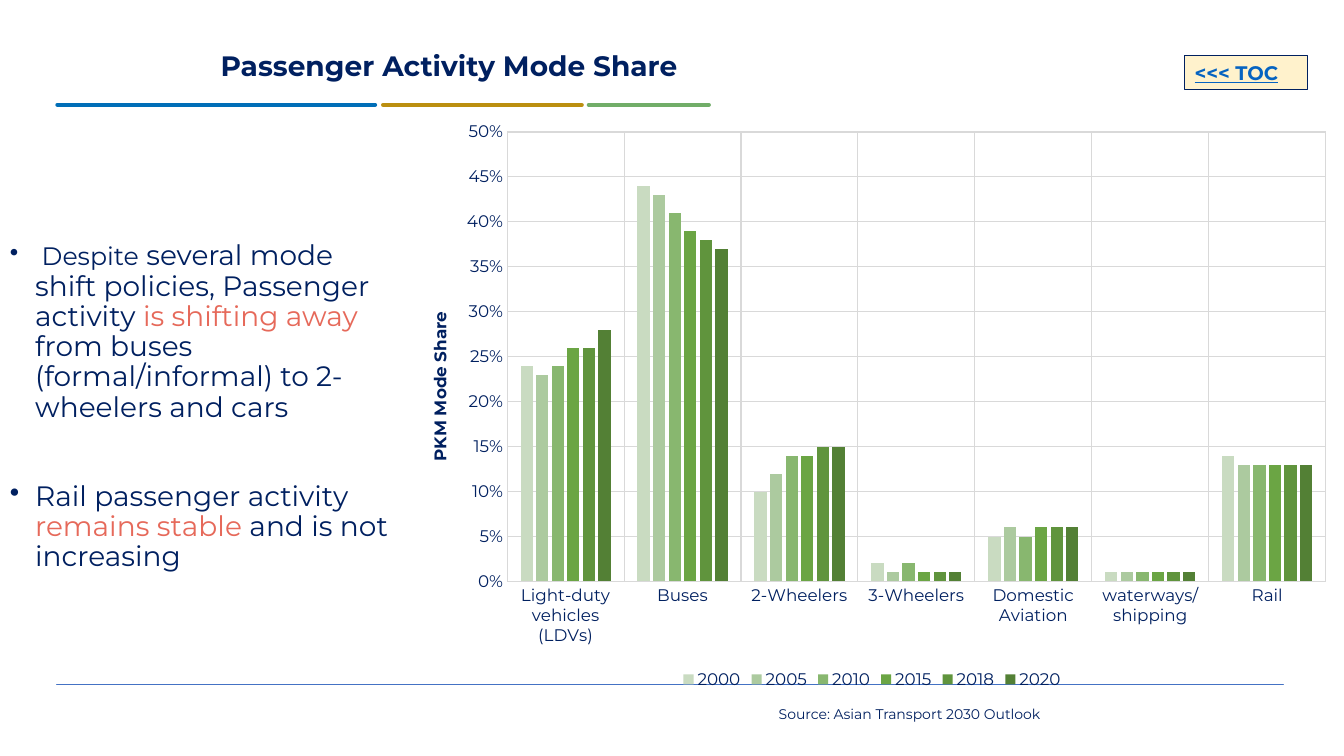
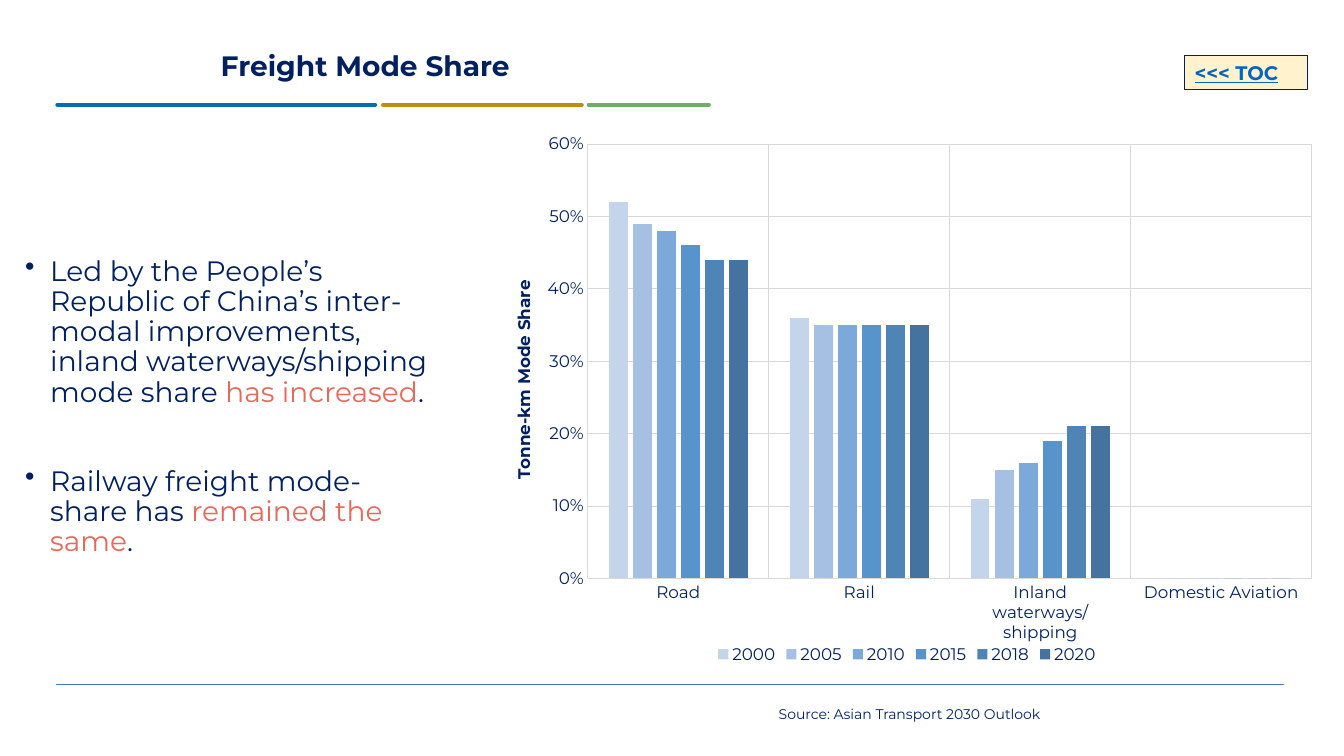
"""Build two slides on passenger and freight mode share."""
import pptx
import pptx.chart.data
import pptx.dml.color
import pptx.enum.chart
import pptx.enum.shapes
import pptx.enum.text
import pptx.oxml
import pptx.oxml.ns
import pptx.util
from dataclasses import dataclass

Inches = pptx.util.Inches
Pt = pptx.util.Pt
RGB = pptx.dml.color.RGBColor.from_string
qn = pptx.oxml.ns.qn
Align = pptx.enum.text.PP_ALIGN
Chart = pptx.enum.chart


@dataclass(frozen=True)
class Theme:
    font: str = "Montserrat"
    navy: str = "002060"
    accent: str = "E6695A"
    link: str = "0563C1"
    button: str = "FFF2CC"
    grid: str = "D9D9D9"
    footer: str = "4472C4"
    bands: tuple = ("006EB7", "BB8F10", "71AD68")
    greens: tuple = ("C9DBC1", "ACCA9F", "88B76F", "6BA544", "60943D", "538035")
    blues: tuple = ("C4D5EB", "A5C0E3", "7AA9DA", "5794CB", "4E85B6", "43739E")
    heading: int = 20
    lead: int = 18
    button_size: int = 14
    label: int = 12
    source: int = 10


theme = Theme()


def write_text(frame, paragraphs, size, color=theme.navy, bold=False, underline=False,
               align=Align.LEFT, spacing=None, gap=0, bullet=False):
    """Fill a frame with paragraphs, each a list of (text, overrides) runs."""
    frame.word_wrap = True
    frame.vertical_anchor = pptx.enum.text.MSO_ANCHOR.MIDDLE
    for index, runs in enumerate(paragraphs):
        paragraph = frame.add_paragraph() if index else frame.paragraphs[0]
        if bullet:
            properties = paragraph._p.get_or_add_pPr()
            properties.set("marL", str(Inches(0.25)))
            properties.set("indent", str(Inches(-0.25)))
            pptx.oxml.ns.nsdecls("a")
            properties.append(pptx.oxml.parse_xml(
                f'<a:buChar {pptx.oxml.ns.nsdecls("a")} char="•"/>'))
        paragraph.alignment = align
        if spacing:
            paragraph.line_spacing = spacing
        if index and gap:
            paragraph.space_before = Pt(gap)
        for words, change in runs:
            run = paragraph.add_run()
            run.text = words
            run.font.name = theme.font
            run.font.size = Pt(change.get("size", size))
            run.font.color.rgb = RGB(change.get("color", color))
            run.font.bold = bold
            run.font.underline = underline


def set_layout(parent, **fractions):
    """Place a chart part by fractions of the chart area."""
    old = parent.find(qn("c:layout"))
    if old is not None:
        parent.remove(old)
    target = '<c:layoutTarget val="inner"/>' if "w" in fractions else ""
    modes = "".join(f'<c:{axis}Mode val="edge"/>' for axis in "xy")
    values = "".join(f'<c:{key} val="{value:.4f}"/>' for key, value in fractions.items())
    layout = pptx.oxml.parse_xml(
        f'<c:layout {pptx.oxml.ns.nsdecls("c")}><c:manualLayout>{target}{modes}{values}'
        '</c:manualLayout></c:layout>')
    parent.insert(0 if parent.find(qn("c:tx")) is None else 1, layout)


accent = {"color": theme.accent}
years = ("2000", "2005", "2010", "2015", "2018", "2020")
rules = [(0.56, 12.73, 6.79, theme.footer, 0.5)]
rules += [(start, end, 1.04, color, 3) for (start, end), color in
          zip(((0.57, 3.72), (3.8, 5.77), (5.84, 7.03)), theme.bands)]

topics = [
    dict(
        title="Passenger Activity Mode Share",
        body=(0, 1.44, 4.08, 5.2),
        points=[
            [(" Despite", {"size": theme.lead}),
             (" several mode shift policies, Passenger activity ", {}),
             ("is shifting away", accent),
             (" from buses (formal/informal) to 2-wheelers and cars", {})],
            [("Rail passenger activity ", {}), ("remains stable", accent),
             (" and is not increasing", {})],
        ],
        area=(3.97, 1.1, 9.36, 5.78),
        plot=(5.03, 1.31, 8.12, 4.46),
        axis_title="PKM Mode Share",
        axis_title_at=(4.22, 3.06),
        top=0.5, step=0.05, colors=theme.greens,
        shares={
            "Light-duty vehicles (LDVs)": (0.24, 0.23, 0.24, 0.26, 0.26, 0.28),
            "Buses": (0.44, 0.43, 0.41, 0.39, 0.38, 0.37),
            "2-Wheelers": (0.1, 0.12, 0.14, 0.14, 0.15, 0.15),
            "3-Wheelers": (0.02, 0.01, 0.02, 0.01, 0.01, 0.01),
            "Domestic Aviation": (0.05, 0.06, 0.05, 0.06, 0.06, 0.06),
            "waterways/shipping": (0.01, 0.01, 0.01, 0.01, 0.01, 0.01),
            "Rail": (0.14, 0.13, 0.13, 0.13, 0.13, 0.13),
        },
    ),
    dict(
        title="Freight Mode Share",
        body=(0.15, 1.44, 4.23, 5.2),
        points=[
            [("Led by the People’s Republic of China’s inter-modal improvements, "
              "inland waterways/shipping mode share ", {}),
             ("has increased", accent), (".", {})],
            [("Railway freight mode-share has ", {}), ("remained the same", accent),
             (".", {})],
        ],
        area=(4.8, 1.22, 8.39, 5.41),
        plot=(5.83, 1.43, 7.18, 4.31),
        axis_title="Tonne-km Mode Share",
        axis_title_at=(5.05, 2.75),
        top=0.6, step=0.1, colors=theme.blues,
        shares={
            "Road": (0.52, 0.49, 0.48, 0.46, 0.44, 0.44),
            "Rail": (0.36, 0.35, 0.35, 0.35, 0.35, 0.35),
            "Inland waterways/shipping": (0.11, 0.15, 0.16, 0.19, 0.21, 0.21),
            "Domestic Aviation": (0, 0, 0, 0, 0, 0),
        },
    ),
]

deck = pptx.Presentation()
deck.slide_width = Inches(13.33)
deck.slide_height = Inches(7.5)

for topic in topics:
    slide = deck.slides.add_slide(deck.slide_layouts[6])

    for start, end, height, color, weight in rules:
        rule = slide.shapes.add_connector(
            pptx.enum.shapes.MSO_CONNECTOR.STRAIGHT,
            Inches(start), Inches(height), Inches(end), Inches(height))
        rule.line.color.rgb = RGB(color)
        rule.line.width = Pt(weight)
        rule.line._get_or_add_ln().set("cap", "rnd")
        rule._element.spPr.append(
            pptx.oxml.parse_xml(f'<a:effectLst {pptx.oxml.ns.nsdecls("a")}/>'))

    source = slide.shapes.add_textbox(*map(Inches, (6.77, 6.88, 4.5, 0.4)))
    write_text(source.text_frame, [[("Source: Asian Transport 2030 Outlook", {})]],
               size=theme.source, align=Align.CENTER)
    title = slide.shapes.add_textbox(*map(Inches, (2.09, 0.24, 7.14, 0.86)))
    write_text(title.text_frame, [[(topic["title"], {})]],
               size=theme.heading, bold=True, spacing=0.9)
    points = slide.shapes.add_textbox(*map(Inches, topic["body"]))
    write_text(points.text_frame, topic["points"],
               size=theme.heading, spacing=0.9, gap=42, bullet=True)

    data = pptx.chart.data.CategoryChartData(number_format="0%")
    data.categories = list(topic["shares"])
    for year, values in zip(years, zip(*topic["shares"].values())):
        data.add_series(year, values)
    chart = slide.shapes.add_chart(
        Chart.XL_CHART_TYPE.COLUMN_CLUSTERED, *map(Inches, topic["area"]), data).chart
    chart.has_title = False
    chart.font.name = theme.font
    chart.font.size = Pt(theme.label)
    chart.font.color.rgb = RGB(theme.navy)
    chart.has_legend = True
    chart.legend.position = Chart.XL_LEGEND_POSITION.BOTTOM
    chart.legend.include_in_layout = False

    columns = chart.plots[0]
    columns.gap_width = 219
    columns.overlap = -27
    columns.vary_by_categories = False
    for series, color in zip(columns.series, topic["colors"]):
        series.format.fill.solid()
        series.format.fill.fore_color.rgb = RGB(color)

    modes, shares = chart.category_axis, chart.value_axis
    for axis in (modes, shares):
        axis.major_tick_mark = Chart.XL_TICK_MARK.NONE
        axis.has_major_gridlines = True
    for line in (modes.format.line, modes.major_gridlines.format.line,
                 shares.major_gridlines.format.line):
        line.color.rgb = RGB(theme.grid)
        line.width = Pt(0.75)
    shares.format.line.fill.background()
    shares.minimum_scale = 0
    shares.maximum_scale = topic["top"]
    shares.major_unit = topic["step"]
    shares.tick_labels.number_format = "0%"
    shares.tick_labels.number_format_is_linked = False
    write_text(shares.axis_title.text_frame, [[(topic["axis_title"], {})]],
               size=theme.label, bold=True, align=Align.CENTER)
    shares.axis_title.text_frame._txBody.bodyPr.set("rot", "-5400000")
    shares.axis_title.text_frame._txBody.bodyPr.set("vert", "horz")

    left, top, width, height = topic["area"]
    plot_left, plot_top, plot_width, plot_height = topic["plot"]
    label_left, label_top = topic["axis_title_at"]
    set_layout(chart.element.find(f".//{qn('c:plotArea')}"),
               x=(plot_left - left) / width, y=(plot_top - top) / height,
               w=plot_width / width, h=plot_height / height)
    set_layout(chart.element.find(f".//{qn('c:valAx')}/{qn('c:title')}"),
               x=(label_left - left) / width, y=(label_top - top) / height)

    contents = slide.shapes.add_shape(
        pptx.enum.shapes.MSO_SHAPE.RECTANGLE, *map(Inches, (11.75, 0.55, 1.22, 0.34)))
    contents.shadow.inherit = False
    contents.fill.solid()
    contents.fill.fore_color.rgb = RGB(theme.button)
    contents.line.color.rgb = RGB(theme.navy)
    contents.line.width = Pt(0.75)
    write_text(contents.text_frame, [[("<<< TOC", {})]], size=theme.button_size,
               color=theme.link, bold=True, underline=True)

deck.save("out.pptx")
